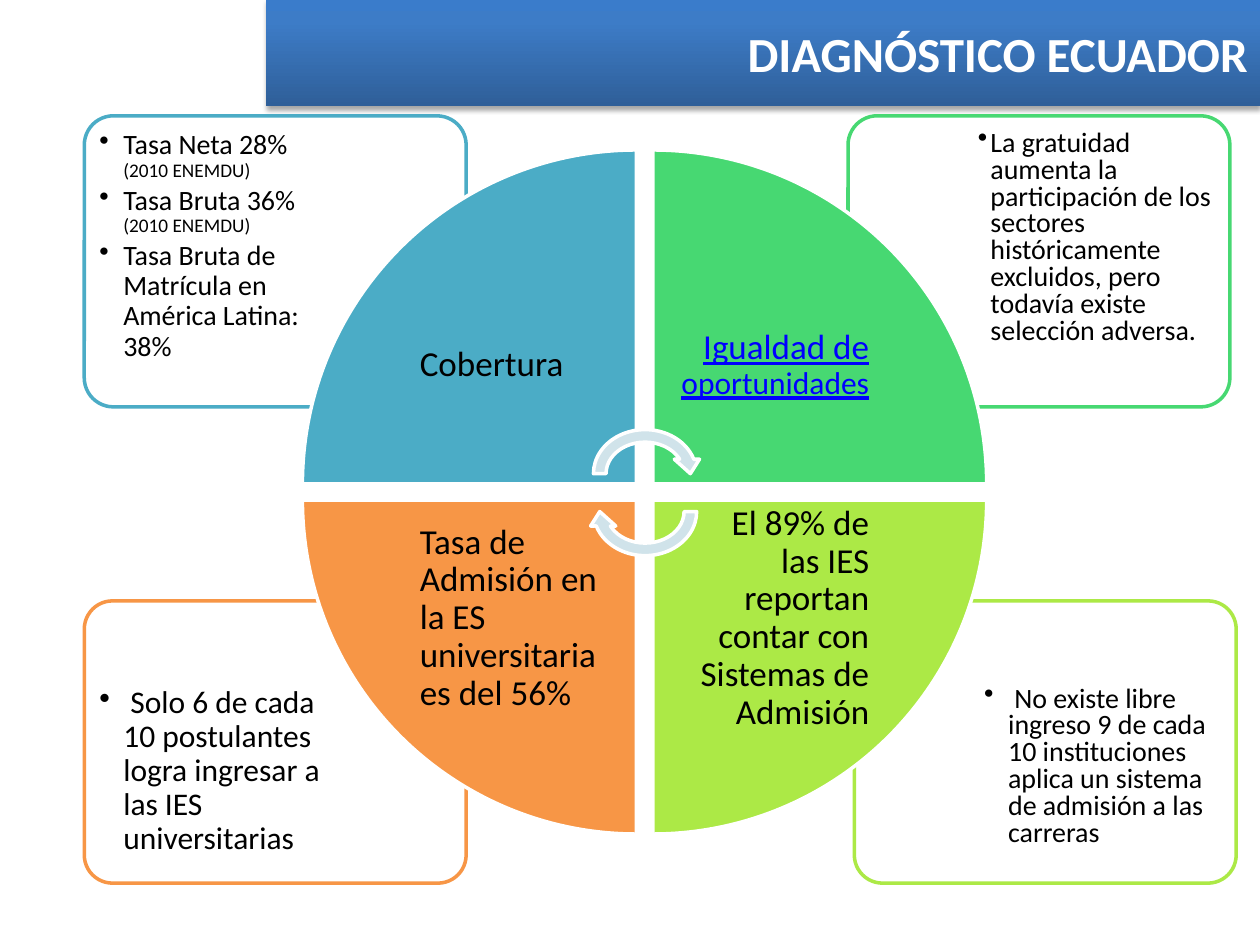
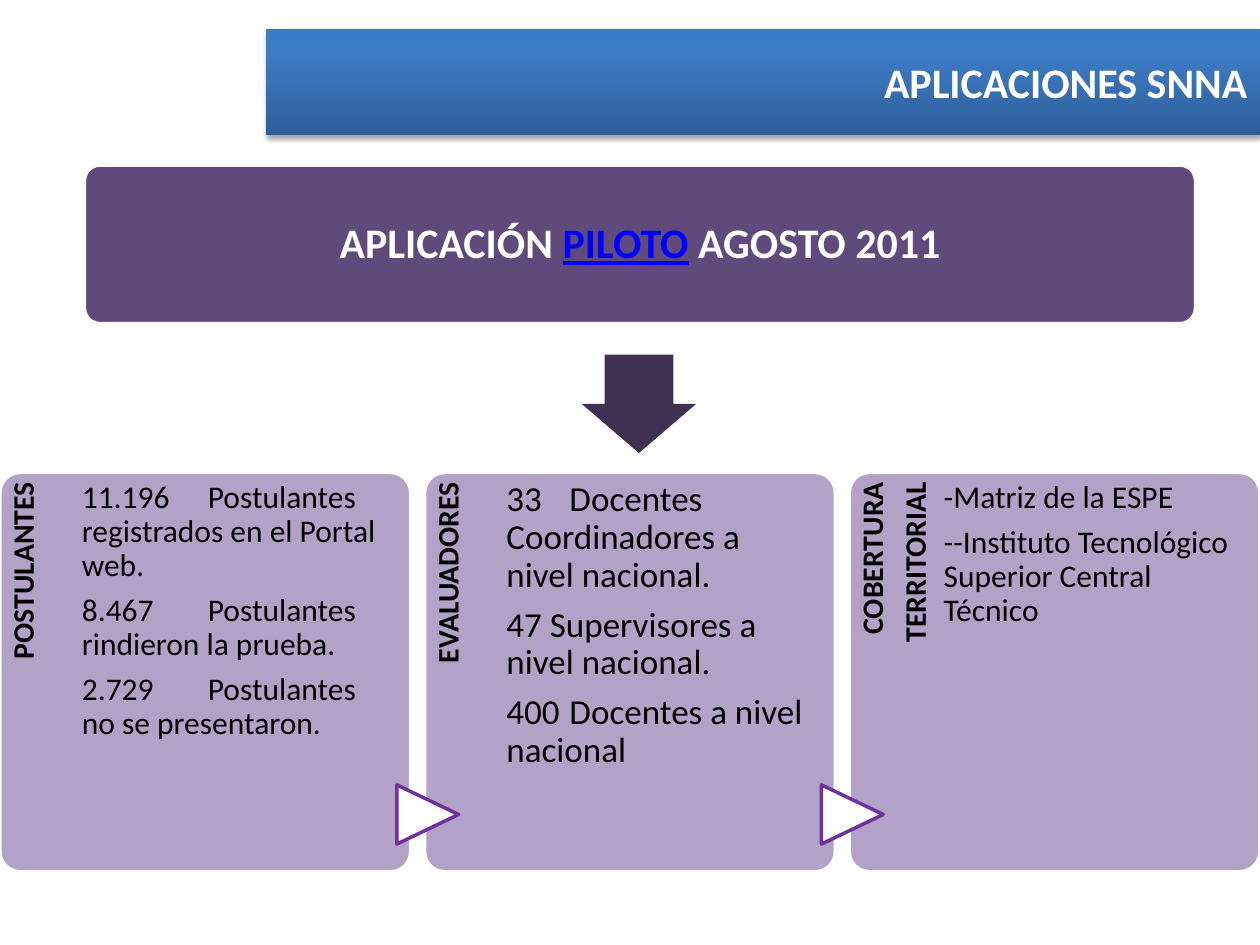
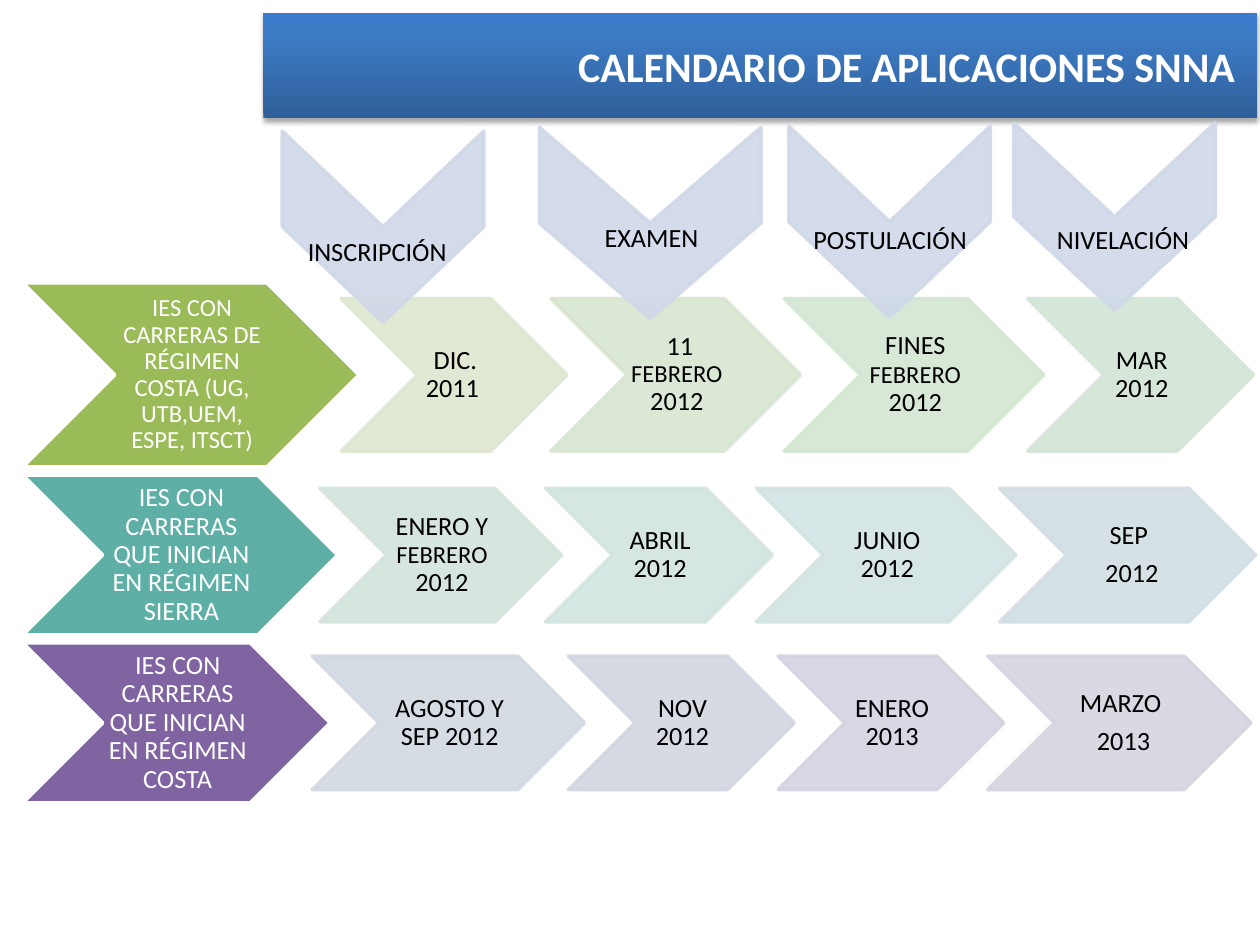
"""Build the three admission-system slides with python-pptx."""
from copy import deepcopy
from dataclasses import dataclass, replace

from lxml.etree import SubElement
from pptx import Presentation
from pptx.dml.color import RGBColor
from pptx.enum.shapes import MSO_SHAPE
from pptx.enum.text import MSO_ANCHOR, PP_ALIGN
from pptx.oxml.ns import qn
from pptx.util import Pt


@dataclass(frozen=True)
class Theme:
    """Hold the colours and type sizes of the deck."""
    font: str = "Calibri"
    white: str = "FFFFFF"
    black: str = "000000"
    link: str = "0000FF"
    band: tuple = ((0, "2F5F99"), (0.8, "3D7CC7"), (1, "3A7CCB"))
    blue: str = "4BACC6"
    green: str = "47D872"
    orange: str = "F79646"
    lime: str = "ACE946"
    cycle: str = "D0E3EA"
    banner: str = "604A7B"
    arrow: str = "403152"
    column: str = "B3A2C7"
    marker: str = "7030A0"
    heading: str = "D0D8E8"
    line: float = 2
    alpha: int = 90
    title: int = 28
    subtitle: int = 24
    large: int = 20
    body: int = 18
    tag: int = 17
    note: int = 16
    cell: int = 15
    small: int = 14
    source: int = 11


@dataclass(frozen=True)
class Style:
    """Describe how the paragraphs of a box are set."""
    size: int
    color: str = "000000"
    bold: bool = False
    align: PP_ALIGN = PP_ALIGN.LEFT
    spacing: float = 0.9
    after: float = 0.35
    indent: float = 0
    hang: float = 0
    bullet: str = ""
    tab: float = 0


@dataclass(frozen=True)
class Quadrant:
    """Describe one quarter of the wheel and its outer panel."""
    color: str
    right: bool
    bottom: bool
    turn: int
    panel: tuple
    label: list
    label_indent: float
    notes: list
    note_style: Style


THEME = Theme()
CELL = Style(THEME.cell, align=PP_ALIGN.CENTER)
NOTE = Style(THEME.note, after=0.15, indent=13.7, hang=13.7, bullet="•")
CELL_INSETS = (1.4, 0.7, 0, 0.7)
LINK = {"color": THEME.link, "underline": True}
MINOR = {"size": THEME.small}


def set_alpha(color_parent, percent):
    """Make the solid colour below an element partly transparent."""
    for color in color_parent.iter(qn("a:srgbClr")):
        SubElement(color, qn("a:alpha"), val=str(percent * 1000))


def draw(page, kind, frame, fill, line=None, alpha=None, line_alpha=None, turn=0, adjust=()):
    """Draw a preset shape without a shadow."""
    shape = page.shapes.add_shape(kind, *(Pt(length) for length in frame))
    shape.shadow.inherit = False
    shape.rotation = turn
    for index, value in enumerate(adjust):
        shape.adjustments[index] = value
    shape.fill.solid()
    shape.fill.fore_color.rgb = RGBColor.from_string(fill)
    if alpha:
        set_alpha(shape.element.spPr.find(qn("a:solidFill")), alpha)
    if line:
        shape.line.color.rgb = RGBColor.from_string(line)
        shape.line.width = Pt(THEME.line)
    else:
        shape.line.fill.background()
    if line_alpha:
        set_alpha(shape.line._get_or_add_ln(), line_alpha)
    return shape


def add_span(para, text, style, color=None, size=None, underline=None):
    """Add one run in the style of its paragraph."""
    span = para.add_run()
    span.text = text
    values = {"name": THEME.font, "size": Pt(size or style.size),
              "bold": style.bold, "underline": underline}
    for name, value in values.items():
        setattr(span.font, name, value)
    span.font.color.rgb = RGBColor.from_string(color or style.color)


def write(text_frame, paragraphs, style):
    """Fill a text frame; a paragraph is a string or a list of spans."""
    for index, spans in enumerate(paragraphs):
        para = text_frame.paragraphs[0] if index == 0 else text_frame.add_paragraph()
        properties = para._p.get_or_add_pPr()
        properties.set("marL", str(Pt(style.indent)))
        properties.set("indent", str(-Pt(style.hang)))
        if style.bullet:
            SubElement(properties, qn("a:buChar"), char=style.bullet)
        if style.tab:
            stops = SubElement(properties, qn("a:tabLst"))
            SubElement(stops, qn("a:tab"), pos=str(Pt(style.tab)), algn="l")
        values = {"alignment": style.align, "line_spacing": style.spacing,
                  "space_after": Pt(style.after * style.size)}
        for name, value in values.items():
            setattr(para, name, value)
        for text, changes in [(spans, {})] if isinstance(spans, str) else spans:
            add_span(para, text, style, **changes)


def add_text(page, frame, paragraphs, style, insets, anchor=MSO_ANCHOR.MIDDLE, turn=0):
    """Add a wrapped text box."""
    box = page.shapes.add_textbox(*(Pt(length) for length in frame))
    box.rotation = turn
    box.text_frame.word_wrap = True
    box.text_frame.vertical_anchor = anchor
    for side, inset in zip(("left", "top", "right", "bottom"), insets):
        setattr(box.text_frame, f"margin_{side}", Pt(inset))
    write(box.text_frame, paragraphs, style)


def add_title(page, text, left, top, size=THEME.subtitle):
    """Add the blue gradient title band."""
    band = draw(page, MSO_SHAPE.ACTION_BUTTON_CUSTOM, (left, top, 568, 60.5), THEME.white)
    band.fill.gradient()
    band.fill.gradient_angle = 90
    stops = band.element.spPr.find(qn("a:gradFill")).find(qn("a:gsLst"))
    stops.append(deepcopy(stops[0]))
    for stop, (position, color) in zip(band.fill.gradient_stops, THEME.band):
        stop.position = position
        stop.color.rgb = RGBColor.from_string(color)
    effects = band.element.spPr.find(qn("a:effectLst"))
    shadow = SubElement(effects, qn("a:outerShdw"), blurRad=str(Pt(3.1)), dist=str(Pt(1.8)),
                        dir="5400000", rotWithShape="0")
    SubElement(shadow, qn("a:srgbClr"), val=THEME.black)
    set_alpha(shadow, 35)
    band.text_frame.word_wrap = True
    band.text_frame.vertical_anchor = MSO_ANCHOR.MIDDLE
    write(band.text_frame, [text],
          Style(size, THEME.white, True, PP_ALIGN.RIGHT, spacing=1, after=0))


def add_panel(page, quadrant):
    """Add the outlined panel and its notes in the outer corner."""
    left, top, width, height = quadrant.panel
    draw(page, MSO_SHAPE.ROUNDED_RECTANGLE, quadrant.panel, THEME.white, quadrant.color,
         THEME.alpha, adjust=(0.1,))
    margin, text_width, text_height = 3.6, 145.4, 0.705 * height
    text_left = left + width - text_width - margin if quadrant.right else left + margin
    text_top = top + height - text_height - margin if quadrant.bottom else top + margin
    add_text(page, (text_left, text_top, text_width, text_height), quadrant.notes,
             quadrant.note_style, (5, 5, 5, 5), MSO_ANCHOR.TOP)


def add_wedge(page, quadrant):
    """Add a quarter of the wheel with its label near the centre."""
    size, label_size = 190.8, 135.2
    left = 373 if quadrant.right else 172.8
    top = 285.8 if quadrant.bottom else 85.7
    draw(page, MSO_SHAPE.PIE_WEDGE, (left, top, size, size), quadrant.color, THEME.white,
         turn=quadrant.turn)
    label_left = left if quadrant.right else left + size - label_size
    label_top = top if quadrant.bottom else top + size - label_size
    align = PP_ALIGN.RIGHT if quadrant.right else PP_ALIGN.LEFT
    add_text(page, (label_left, label_top, label_size, label_size), quadrant.label,
             Style(THEME.large, align=align, indent=quadrant.label_indent), (11.5,) * 4)


def build_diagnosis(page):
    """Build the wheel of four findings."""
    source = ("(2010 ENEMDU)", {"size": THEME.source})
    quadrants = [
        Quadrant(THEME.lime, True, True, 180, (488.2, 343.4, 218.2, 161.3),
                 ["El 89% de las IES reportan contar con Sistemas de Admisión"], 13.7,
                 [" No existe libre ingreso 9 de cada 10 instituciones aplica un sistema "
                  "de admisión a las carreras"], replace(NOTE, spacing=0.8)),
        Quadrant(THEME.orange, False, True, 270, (48.2, 343.4, 218.2, 161.3),
                 ["Tasa de Admisión en la ES universitaria es del 56%"], 0,
                 [" Solo 6 de cada 10 postulantes logra ingresar a las IES universitarias"],
                 replace(NOTE, size=THEME.body)),
        Quadrant(THEME.green, True, False, 90, (484.6, 66.2, 218.2, 166.3),
                 [[("Igualdad de ", LINK), ("oportunidades", {**LINK, "size": THEME.body})]], 0,
                 ["La gratuidad aumenta la participación de los sectores históricamente "
                  "excluidos, pero todavía existe selección adversa."],
                 replace(NOTE, spacing=0.8, indent=7.2, hang=7.2)),
        Quadrant(THEME.blue, False, False, 0, (48.2, 66.2, 218.2, 166.3), ["Cobertura"], 0,
                 [[("Tasa Neta 28% ", {}), source], [("Tasa Bruta 36% ", {}), source],
                  "Tasa Bruta de Matrícula en América Latina: 38%"], NOTE),
    ]
    add_title(page, "DIAGNÓSTICO ECUADOR", 152, 0, THEME.title)
    for add_part in (add_panel, add_wedge):
        for quadrant in quadrants:
            add_part(page, quadrant)
    for top, turn in ((241.9, 0), (263.5, 180)):
        draw(page, MSO_SHAPE.CIRCULAR_ARROW, (335.5, top, 66.2, 57.6), THEME.cycle,
             THEME.white, turn=turn)


def add_column(page, left, tags, paragraphs, style):
    """Add a column with a vertical tag and its figures."""
    top, height = 270, 228.2
    draw(page, MSO_SHAPE.ROUNDED_RECTANGLE, (left, top, 234.7, height), THEME.column,
         THEME.white, adjust=(0.05,))
    add_text(page, (left - 69.8, 339.8, 187.2, 46.8), tags,
             Style(THEME.tag, bold=True, align=PP_ALIGN.RIGHT), (0, 4.3, 5.8, 0),
             MSO_ANCHOR.TOP, 270)
    add_text(page, (left + 46.8, top, 175, height), paragraphs, style, (0, 5, 0, 0),
             MSO_ANCHOR.TOP)


def build_pilot(page):
    """Build the pilot banner above three columns."""
    columns = [
        (["POSTULANTES"],
         ["11.196 \tPostulantes registrados en el Portal web.",
          "8.467 \tPostulantes rindieron la prueba.",
          "2.729 \tPostulantes no se presentaron."], Style(THEME.body, tab=63)),
        (["EVALUADORES"],
         ["33 \tDocentes Coordinadores a nivel nacional.",
          "47 Supervisores a nivel nacional.",
          "400 \tDocentes a nivel nacional"], Style(THEME.large, tab=70)),
        (["COBERTURA", "TERRITORIAL"],
         ["-Matriz de la ESPE", "--Instituto Tecnológico Superior Central Técnico"],
         Style(THEME.body, indent=7.2)),
    ]
    step = 242.65
    draw(page, MSO_SHAPE.ROUNDED_RECTANGLE, (48.2, 94.3, 635, 90.7), THEME.banner,
         THEME.white, adjust=(0.1,))
    add_text(page, (51.1, 97.2, 629.3, 85.7),
             [[("APLICACIÓN ", {}), ("PILOTO", LINK), (" AGOSTO 2011", {})]],
             Style(THEME.subtitle, THEME.white, True, PP_ALIGN.CENTER), (7.2,) * 4)
    add_title(page, "APLICACIONES SNNA", 152, 16.6)
    for index, column in enumerate(columns):
        add_column(page, index * step, *column)
    for index in range(len(columns) - 1):
        draw(page, MSO_SHAPE.FLOWCHART_EXTRACT, (227.5 + index * step, 447.8, 33.8, 35.3),
             THEME.white, THEME.marker, turn=90)
    draw(page, MSO_SHAPE.RIGHT_ARROW, (337, 198, 56.2, 65.5), THEME.arrow, turn=90,
         adjust=(0.6, 0.5))


def add_chevron(page, left, middle, width, height, fill, paragraphs, style, pale=True):
    """Add a chevron whose text lies between its two points."""
    top = middle - height / 2
    alpha = THEME.alpha if pale else None
    draw(page, MSO_SHAPE.CHEVRON, (left, top, width, height), fill,
         fill if pale else THEME.white, alpha, alpha)
    add_text(page, (left + height / 2, top, width - height, height), paragraphs, style,
             CELL_INSETS)


def add_schedule_row(page, middle, label, steps, step_height):
    """Add a label chevron and the chain of dates that follows it."""
    left, label_overlap, overlap = 13, 10.2, 9.2
    width, height, fill, text, size = label
    add_chevron(page, left, middle, width, height, fill, [text],
                replace(CELL, size=size, color=THEME.white), pale=False)
    left += width - label_overlap
    for step_width, step_fill, paragraphs in steps:
        add_chevron(page, left, middle, step_width, step_height, step_fill, paragraphs, CELL)
        left += step_width - overlap


def build_calendar(page):
    """Build the calendar of three schedules under four stages."""
    rows = [
        (214.2, (192.2, 105.1, "9BBB59",
                 "IES CON CARRERAS DE RÉGIMEN COSTA (UG, UTB,UEM, ESPE, ITSCT)", THEME.small),
         [(129, "DEE7D1", ["DIC. 2011 "]),
          (142.6, "D8E6D1", [[(" 11 ", {}), ("FEBRERO ", MINOR), ("2012", {})]]),
          (148.3, "D3E6D2", [[("FINES ", {}), ("FEBRERO", MINOR), (" 2012", {})]]),
          (129, "D2E5D6", ["MAR 2012"])], 87.1),
        (317.2, (180, 91.4, "5EAFA6",
                 "IES CON CARRERAS QUE INICIAN EN RÉGIMEN SIERRA", THEME.cell),
         [(138.2, "D2E4DB", [[("ENERO Y ", {}), ("FEBRERO", MINOR), (" 2012", {})]]),
          (129.6, "D2E4E0", ["ABRIL 2012"]),
          (148.3, "D2E3E3", ["JUNIO 2012"]),
          (146.2, "D2DEE3", ["SEP", " 2012"])], 76.3),
        (413.1, (175.7, 91.4, "8064A2",
                 "IES CON CARRERAS QUE INICIAN EN RÉGIMEN COSTA", THEME.cell),
         [(155.5, "D2D9E2", ["AGOSTO Y SEP 2012"]),
          (129, "D3D5E1", ["NOV 2012"]),
          (129, "D4D3E1", ["ENERO 2013"]),
          (150.5, "D8D3E0", ["MARZO", " 2013"])], 76.3),
    ]
    stages = [
        ("EXAMEN", (316.8, 64.1, 109.4, 126.7), (333.4, 99.7, 76.3, 74.2)),
        ("INSCRIPCIÓN", (164.2, 72, 109.4, 115.2), (172.8, 107.7, 84.2, 74.2)),
        ("POSTULACIÓN", (453.6, 69.1, 109.4, 115.2), (461.5, 100.8, 92.9, 74.2)),
        ("NIVELACIÓN", (583.2, 66.2, 107.3, 115.2), (599, 100.8, 84.2, 74.2)),
    ]
    for row in rows:
        add_schedule_row(page, *row)
    add_title(page, "CALENDARIO DE APLICACIONES SNNA ", 150.5, 7.2)
    for name, arrow_frame, text_frame in stages:
        draw(page, MSO_SHAPE.CHEVRON, arrow_frame, THEME.heading, THEME.heading,
             THEME.alpha, THEME.alpha, turn=90)
        add_text(page, text_frame, [name], CELL, CELL_INSETS)


def main():
    """Build and save the deck."""
    deck = Presentation()
    deck.slide_width, deck.slide_height = Pt(720), Pt(540)
    for build in (build_diagnosis, build_pilot, build_calendar):
        build(deck.slides.add_slide(deck.slide_layouts[6]))
    deck.save("out.pptx")


if __name__ == "__main__":
    main()
